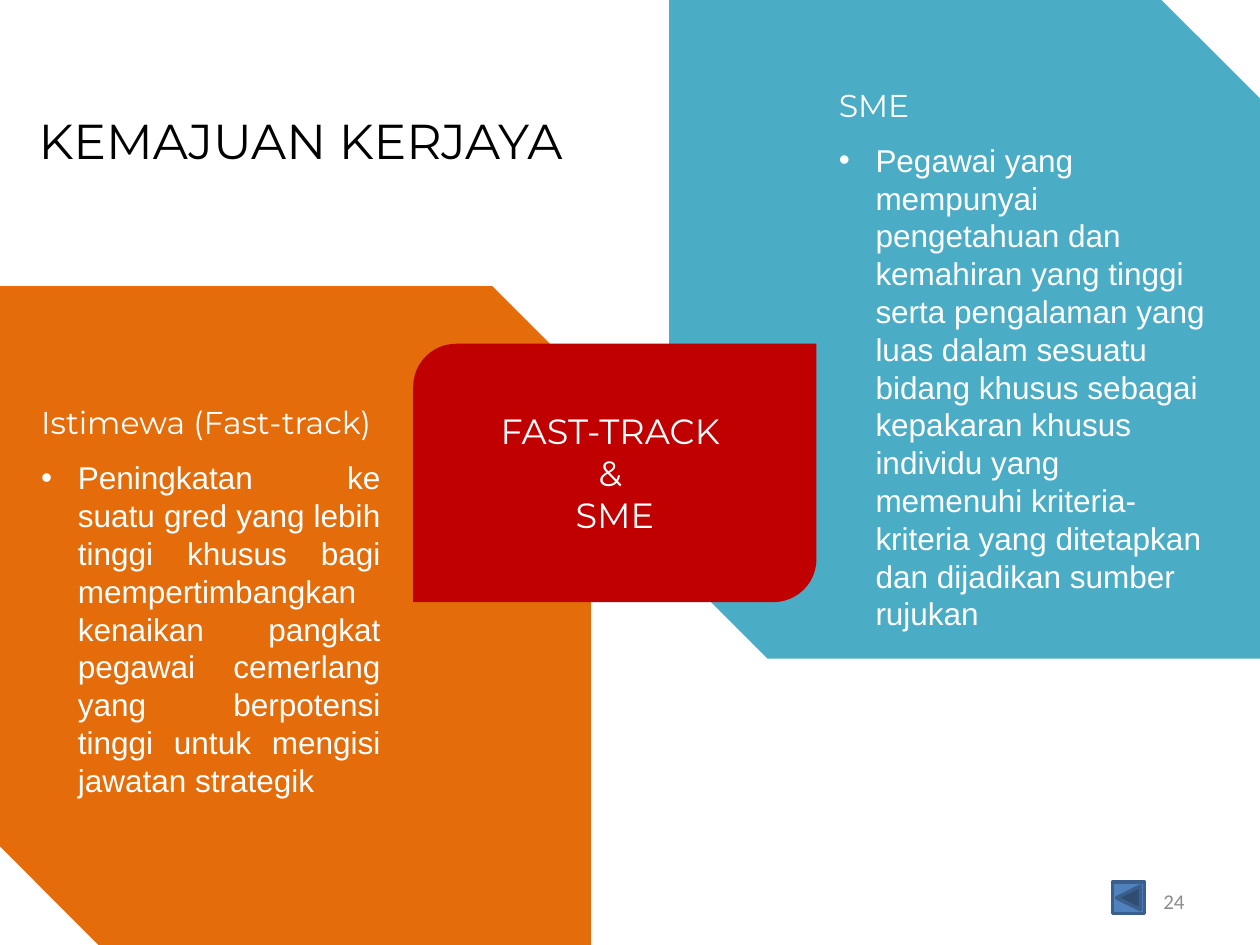
from pptx import Presentation
from pptx.dml.color import RGBColor
from pptx.enum.shapes import MSO_SHAPE
from pptx.enum.text import MSO_ANCHOR, PP_ALIGN
from pptx.oxml.xmlchemy import OxmlElement
from pptx.util import Cm, Pt

SNIP = MSO_SHAPE.SNIP_2_DIAG_RECTANGLE
ROUND = MSO_SHAPE.ROUND_2_DIAG_RECTANGLE
BACK = MSO_SHAPE.ACTION_BUTTON_BACK_OR_PREVIOUS
MIDDLE, TOP = MSO_ANCHOR.MIDDLE, MSO_ANCHOR.TOP
LEFT, CENTER = PP_ALIGN.LEFT, PP_ALIGN.CENTER
RIGHT, JUSTIFY = PP_ALIGN.RIGHT, PP_ALIGN.JUSTIFY
HEAD, BODY, SMALL = "Montserrat", "Arial", "Calibri"
COLORS = {
    "orange": "E46C0A", "teal": "4BACC6", "red": "C00000", "blue": "4F81BD",
    "navy": "3A5F8C", "white": "FFFFFF", "black": "000000", "gray": "8C8C8C",
}
WIDE, HIGH = 25.4, 19.05
PANEL = (11.91, 13.28)


def color(name):
    """Return the named colour."""
    return RGBColor.from_string(COLORS[name])


def add_form(slide, kind, box, fill):
    """Add a flat preset shape without an outline."""
    form = slide.shapes.add_shape(kind, *map(Cm, box))
    form.shadow.inherit = False
    form.fill.solid()
    form.fill.fore_color.rgb = color(fill)
    form.line.fill.background()
    return form


def add_frame(slide, box, anchor=TOP):
    """Add a wrapping text box and return its frame."""
    frame = slide.shapes.add_textbox(*map(Cm, box)).text_frame
    frame.word_wrap = True
    frame.vertical_anchor = anchor
    return frame


def add_run(para, text, size, font, tint, align=LEFT):
    """Add one styled run to an aligned paragraph."""
    para.alignment = align
    run = para.add_run()
    run.text = text
    run.font.size = Pt(size)
    run.font.name = font
    run.font.color.rgb = color(tint)


def add_bullet(para):
    """Give a paragraph a hanging round bullet."""
    props = para._p.get_or_add_pPr()
    props.set("marL", str(Cm(0.74)))
    props.set("indent", str(-Cm(0.74)))
    font = OxmlElement("a:buFont")
    font.set("typeface", BODY)
    mark = OxmlElement("a:buChar")
    mark.set("char", "•")
    props.extend([font, mark])


def add_panel(slide, box, fill, inset, head, body, align):
    """Draw a snipped panel with a heading and a bullet, inset in its box."""
    add_form(slide, SNIP, box, fill)
    left, top, width, height = inset
    frame = add_frame(slide, (box[0] + left, box[1] + top, width, height))
    add_run(frame.paragraphs[0], head, 18, HEAD, "white")
    para = frame.add_paragraph()
    para.space_before = Pt(10)
    para.line_spacing = Pt(21.6)
    add_bullet(para)
    add_run(para, body, 18, BODY, "white", align)


def add_center(slide, box, lines):
    """Draw the red plate with its centred lines."""
    frame = add_form(slide, ROUND, box, "red").text_frame
    frame.word_wrap = True
    frame.vertical_anchor = MIDDLE
    for i, line in enumerate(lines):
        para = frame.add_paragraph() if i else frame.paragraphs[0]
        add_run(para, line, 20, HEAD, "white", CENTER)


def add_title(slide, box, text):
    """Write the slide title."""
    add_run(add_frame(slide, box).paragraphs[0], text, 28, HEAD, "black")


def add_footer(slide, box, number):
    """Write the page number and place the back button in its box."""
    left, top, width, height = box
    frame = add_frame(slide, box, MIDDLE)
    add_run(frame.paragraphs[0], number, 12, SMALL, "gray", RIGHT)
    button = add_form(slide, BACK, (left + 4.22, top + 0.13, 0.64, 0.64), "blue")
    button.line.color.rgb = color("navy")
    button.line.width = Pt(2)


def main():
    """Build and save the slide."""
    deck = Presentation()
    deck.slide_width, deck.slide_height = Cm(WIDE), Cm(HIGH)
    slide = deck.slides.add_slide(deck.slide_layouts[6])
    wide, high = PANEL
    add_panel(
        slide, (0, HIGH - high, wide, high), "orange", (0.58, 2.23, 7.34, 9.47),
        "Istimewa (Fast-track)",
        "Peningkatan ke suatu gred yang lebih tinggi khusus bagi "
        "mempertimbangkan kenaikan pangkat pegawai cemerlang yang "
        "berpotensi tinggi untuk mengisi jawatan strategik", JUSTIFY)
    add_panel(
        slide, (WIDE - wide, 0, wide, high), "teal", (3.17, 1.6, 8.05, 9.53),
        "SME",
        "Pegawai yang mempunyai pengetahuan dan kemahiran yang tinggi serta "
        "pengalaman yang luas dalam sesuatu bidang khusus sebagai kepakaran "
        "khusus individu yang memenuhi kriteria-kriteria yang ditetapkan dan "
        "dijadikan sumber rujukan", LEFT)
    add_center(slide, (8.33, 6.93, 8.13, 5.21), ["FAST-TRACK ", "& ", "SME"])
    add_title(slide, (0.53, 2.11, 12.29, 1.45), "KEMAJUAN KERJAYA")
    add_footer(slide, (18.21, 17.65, 5.92, 1.02), "24")
    deck.save("out.pptx")


if __name__ == "__main__":
    main()
